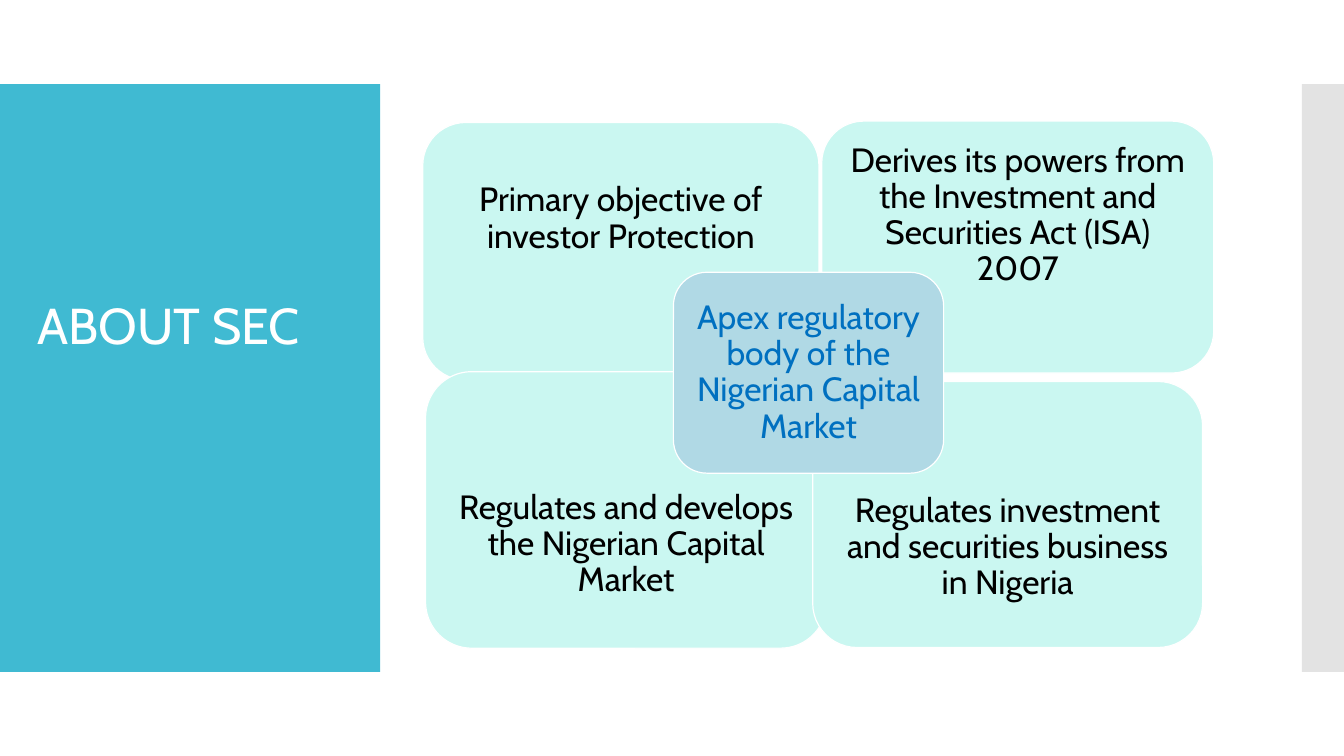
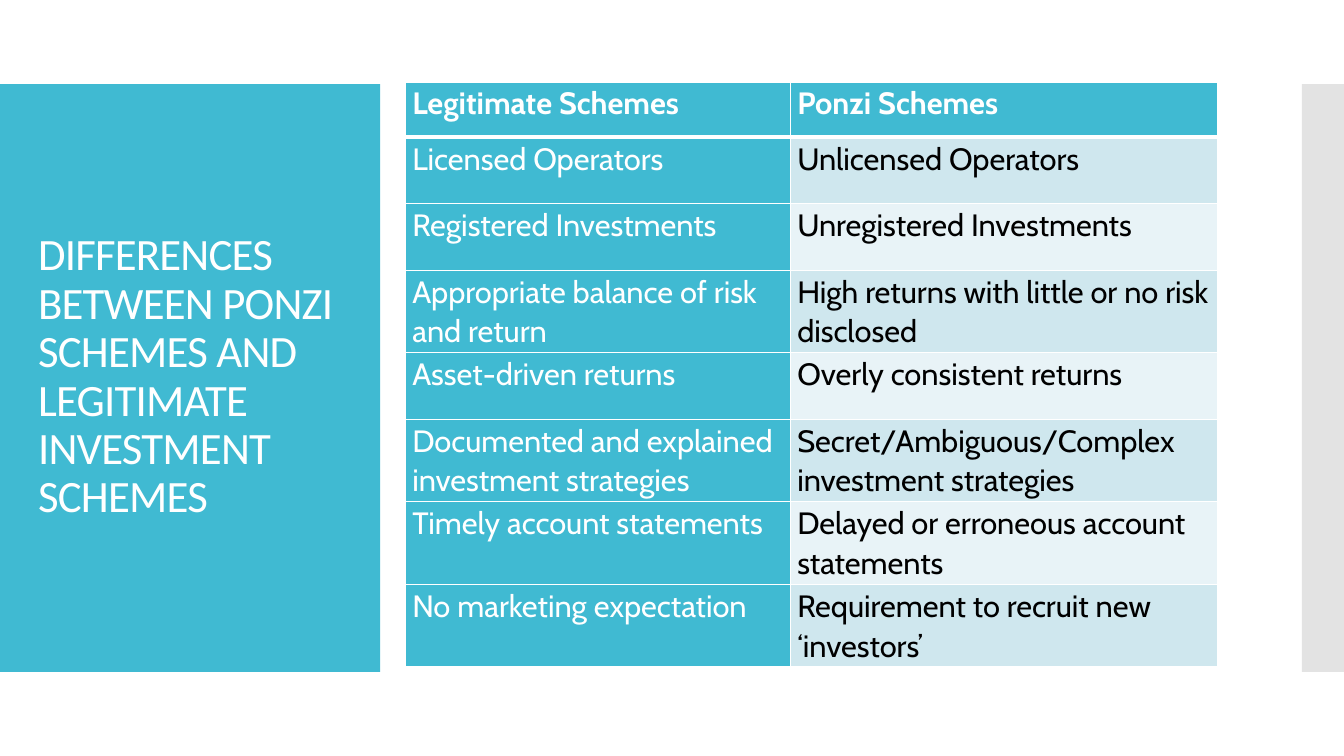
import pptx
import pptx.dml.color
import pptx.enum.shapes
import pptx.enum.text
import pptx.oxml.ns
import pptx.util
from lxml import etree

Pt = pptx.util.Pt
RGB = pptx.dml.color.RGBColor
KIND = pptx.enum.shapes.MSO_SHAPE
ALIGN = pptx.enum.text.PP_ALIGN
ANCHOR = pptx.enum.text.MSO_ANCHOR
qn = pptx.oxml.ns.qn

TEAL = RGB(0x40, 0xBA, 0xD2)
GREY = RGB(0xC8, 0xC8, 0xC8)
MINT = RGB(0xCA, 0xF7, 0xF1)
SKY = RGB(0xB0, 0xD9, 0xE5)
BLUE = RGB(0x00, 0x70, 0xC0)
PALE = RGB(0xCF, 0xE7, 0xEE)
LIGHT = RGB(0xE8, 0xF3, 0xF7)
WHITE = RGB(0xFF, 0xFF, 0xFF)
BLACK = RGB(0x00, 0x00, 0x00)
FONT = "Cabin"

# Text, box (left, top, width, height), and whether the text sits low
CARDS = [
    ("Primary objective of investor Protection", (302, 87.5, 283, 184), False),
    ("Derives its powers from the Investment and Securities Act (ISA) 2007",
     (587, 86.5, 280, 180), False),
    ("Regulates and develops the Nigerian Capital Market",
     (304, 265.5, 286.5, 197.5), True),
    ("Regulates investment and securities business in Nigeria",
     (580.5, 272.5, 278.5, 190), True),
]

ROWS = [
    (39.5, "Legitimate Schemes", "Ponzi Schemes"),
    (47.5, "Licensed Operators", "Unlicensed Operators"),
    (47.5, "Registered Investments", "Unregistered Investments"),
    (59, "Appropriate balance of risk and return",
     "High returns with little or no risk disclosed"),
    (47.5, "Asset-driven returns", "Overly consistent returns"),
    (59, "Documented and explained investment strategies",
     "Secret/Ambiguous/Complex investment strategies"),
    (59, "Timely account statements", "Delayed or erroneous account statements"),
    (59, "No marketing expectation", "Requirement to recruit new ‘investors’"),
]


def write(frame, text, size, color, align, space, font=FONT, bold=False):
    para = frame.paragraphs[0]
    para.alignment = align
    para.line_spacing = space
    run = para.add_run()
    run.text = text
    run.font.name = font
    run.font.size = Pt(size)
    run.font.bold = bold
    run.font.color.rgb = color
    return run


def inset(frame, left, top, right, bottom):
    frame.margin_left, frame.margin_top = Pt(left), Pt(top)
    frame.margin_right, frame.margin_bottom = Pt(right), Pt(bottom)


def block(slide, kind, box, fill, line=None):
    shape = slide.shapes.add_shape(kind, *map(Pt, box))
    shape.shadow.inherit = False
    shape.fill.solid()
    shape.fill.fore_color.rgb = fill
    if line is None:
        shape.line.fill.background()
    else:
        shape.line.color.rgb = line
        shape.line.width = Pt(0.85)
    return shape


def bands(slide):
    """Draw the side bands and move them to the layout all slides share."""
    left = block(slide, KIND.RECTANGLE, (0, 60, 271.5, 420), TEAL)
    right = block(slide, KIND.RECTANGLE, (930, 60, 30, 420), GREY)
    tint = right.element.find(".//" + qn("a:srgbClr"))
    etree.SubElement(tint, qn("a:alpha")).set("val", "50000")
    tree = slide.slide_layout.shapes.element
    for num, band in enumerate((left, right)):
        band.element.find(".//" + qn("p:cNvPr")).set("id", str(50 + num))
        tree.insert(2 + num, band.element)


def head(slide, text, box, size, align, space, font=FONT, wrap=True):
    title = slide.shapes.title
    title.left, title.top, title.width, title.height = map(Pt, box)
    frame = title.text_frame
    frame.auto_size = pptx.enum.text.MSO_AUTO_SIZE.NONE
    frame.vertical_anchor = ANCHOR.MIDDLE
    frame.word_wrap = wrap
    return write(frame, text, size, WHITE, align, space, font)


def card(slide, kind, text, box, fill, color, margins):
    frame = block(slide, kind, box, fill, WHITE).text_frame
    frame.word_wrap = True
    frame.vertical_anchor = ANCHOR.MIDDLE
    inset(frame, *margins)
    write(frame, text, 24, color, ALIGN.CENTER, 0.9)


def edge(cell, top, bottom):
    """Give a cell white borders, 1 pt at the sides."""
    props = cell._tc.get_or_add_tcPr()
    sides = (("L", 1), ("R", 1), ("T", top), ("B", bottom))
    for spot, (side, width) in enumerate(sides):
        line = etree.Element(qn("a:ln" + side), w=str(Pt(width)))
        fill = etree.SubElement(line, qn("a:solidFill"))
        etree.SubElement(fill, qn("a:srgbClr")).set("val", str(WHITE))
        props.insert(spot, line)


def grid(slide):
    tall = sum(row[0] for row in ROWS)
    table = slide.shapes.add_table(
        len(ROWS), 2, Pt(289.5), Pt(58.5), Pt(580), Pt(tall)).table
    table.first_row = table.horz_banding = False
    for col, width in zip(table.columns, (275, 305)):
        col.width = Pt(width)
    for r, (height, *texts) in enumerate(ROWS):
        table.rows[r].height = Pt(height)
        for c, text in enumerate(texts):
            cell = table.cell(r, c)
            dark = r == 0 or c == 0
            cell.fill.solid()
            cell.fill.fore_color.rgb = TEAL if dark else PALE if r % 2 else LIGHT
            inset(cell, 5, 0.75, 5, 0)
            write(cell.text_frame, text, 22, WHITE if dark else BLACK,
                  ALIGN.LEFT, 1.06, bold=r == 0)
            edge(cell, 3 if r == 1 else 1, 3 if r == 0 else 1)


def about(slide):
    head(slide, "ABOUT SEC", (19.5, 206.5, 202, 51), 36, ALIGN.CENTER, 1,
         wrap=False)
    for text, box, low in CARDS:
        gap = box[3] / 4
        margins = (11.5, gap, 11.5, 0) if low else (11.5, 0, 11.5, gap)
        card(slide, KIND.FLOWCHART_ALTERNATE_PROCESS, text, box, MINT, BLACK,
             margins)
    card(slide, KIND.ROUNDED_RECTANGLE,
         "Apex regulatory body of the Nigerian Capital Market",
         (481, 194.5, 193, 143.5), SKY, BLUE, (7, 7, 7, 7))


def compare(slide):
    run = head(slide,
               "DIFFERENCES BETWEEN PONZI SCHEMES AND LEGITIMATE INVESTMENT SCHEMES",
               (20, 88.5, 281.5, 362), 32, ALIGN.LEFT, 0.9, "Calibri")
    run.font._element.set("spc", "-60")
    grid(slide)


def main():
    deck = pptx.Presentation()
    deck.slide_width, deck.slide_height = Pt(960), Pt(540)
    layout = deck.slide_layouts[5]
    first, second = (deck.slides.add_slide(layout) for _ in range(2))
    bands(first)
    about(first)
    compare(second)
    deck.save("out.pptx")


if __name__ == "__main__":
    main()
